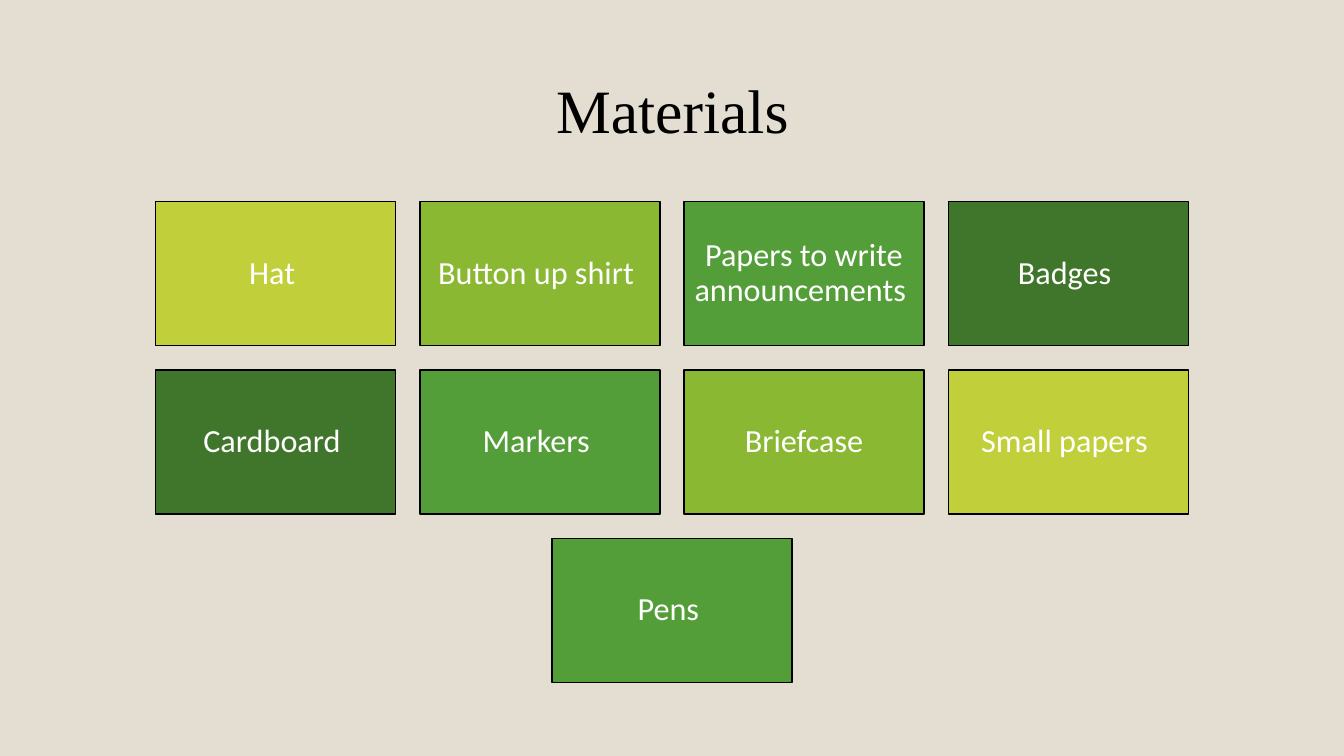
from pptx import Presentation
from pptx.dml.color import RGBColor
from pptx.enum.shapes import MSO_SHAPE
from pptx.enum.text import MSO_ANCHOR, PP_ALIGN
from pptx.util import Inches, Pt

RECTANGLE = MSO_SHAPE.RECTANGLE
MIDDLE = MSO_ANCHOR.MIDDLE
CENTER = PP_ALIGN.CENTER

SAND = RGBColor(0xE3, 0xDE, 0xD1)
BLACK = RGBColor(0x00, 0x00, 0x00)
WHITE = RGBColor(0xFF, 0xFF, 0xFF)
LIME = RGBColor(0xC0, 0xCF, 0x3A)
OLIVE = RGBColor(0x8A, 0xB8, 0x33)
GREEN = RGBColor(0x54, 0x9E, 0x39)
FOREST = RGBColor(0x3F, 0x76, 0x2B)

# Card grid, in inches
SLIDE_WIDTH, SLIDE_HEIGHT = 13.33, 7.5
CARD_WIDTH, CARD_HEIGHT = 2.38, 1.43
GAP = 0.24
GRID_TOP = 2

CARD_ROWS = [
    [("Hat ", LIME), ("Button up shirt ", OLIVE),
     ("Papers to write announcements ", GREEN), ("Badges ", FOREST)],
    [("Cardboard ", FOREST), ("Markers ", GREEN),
     ("Briefcase", OLIVE), ("Small papers ", LIME)],
    [("Pens ", GREEN)],
]


def write_centered(box, text, font, size, color):
    frame = box.text_frame
    frame.word_wrap = True
    frame.vertical_anchor = MIDDLE
    para = frame.paragraphs[0]
    para.alignment = CENTER
    para.line_spacing = 0.9
    span = para.add_run()
    span.text = text
    span.font.name = font
    span.font.size = Pt(size)
    span.font.color.rgb = color


deck = Presentation()
deck.slide_width = Inches(SLIDE_WIDTH)
deck.slide_height = Inches(SLIDE_HEIGHT)
page = deck.slides.add_slide(deck.slide_layouts[6])
page.background.fill.solid()
page.background.fill.fore_color.rgb = SAND

# Title
title = page.shapes.add_textbox(Inches(0.92), Inches(0.4), Inches(11.5), Inches(1.45))
write_centered(title, "Materials", "Times New Roman", 44, BLACK)

# Cards, each row centred on the slide
for row, cards in enumerate(CARD_ROWS):
    row_width = len(cards) * (CARD_WIDTH + GAP) - GAP
    row_left = (SLIDE_WIDTH - row_width) / 2
    top = GRID_TOP + row * (CARD_HEIGHT + GAP)
    for column, (label, color) in enumerate(cards):
        left = row_left + column * (CARD_WIDTH + GAP)
        card = page.shapes.add_shape(RECTANGLE, Inches(left), Inches(top),
                                     Inches(CARD_WIDTH), Inches(CARD_HEIGHT))
        card.shadow.inherit = False
        card.fill.solid()
        card.fill.fore_color.rgb = color
        card.line.color.rgb = BLACK
        card.line.width = Pt(1)
        frame = card.text_frame
        frame.margin_left = frame.margin_right = Inches(0.1)
        frame.margin_top = frame.margin_bottom = Inches(0.1)
        write_centered(card, label, "Calibri", 23, WHITE)

deck.save("out.pptx")
